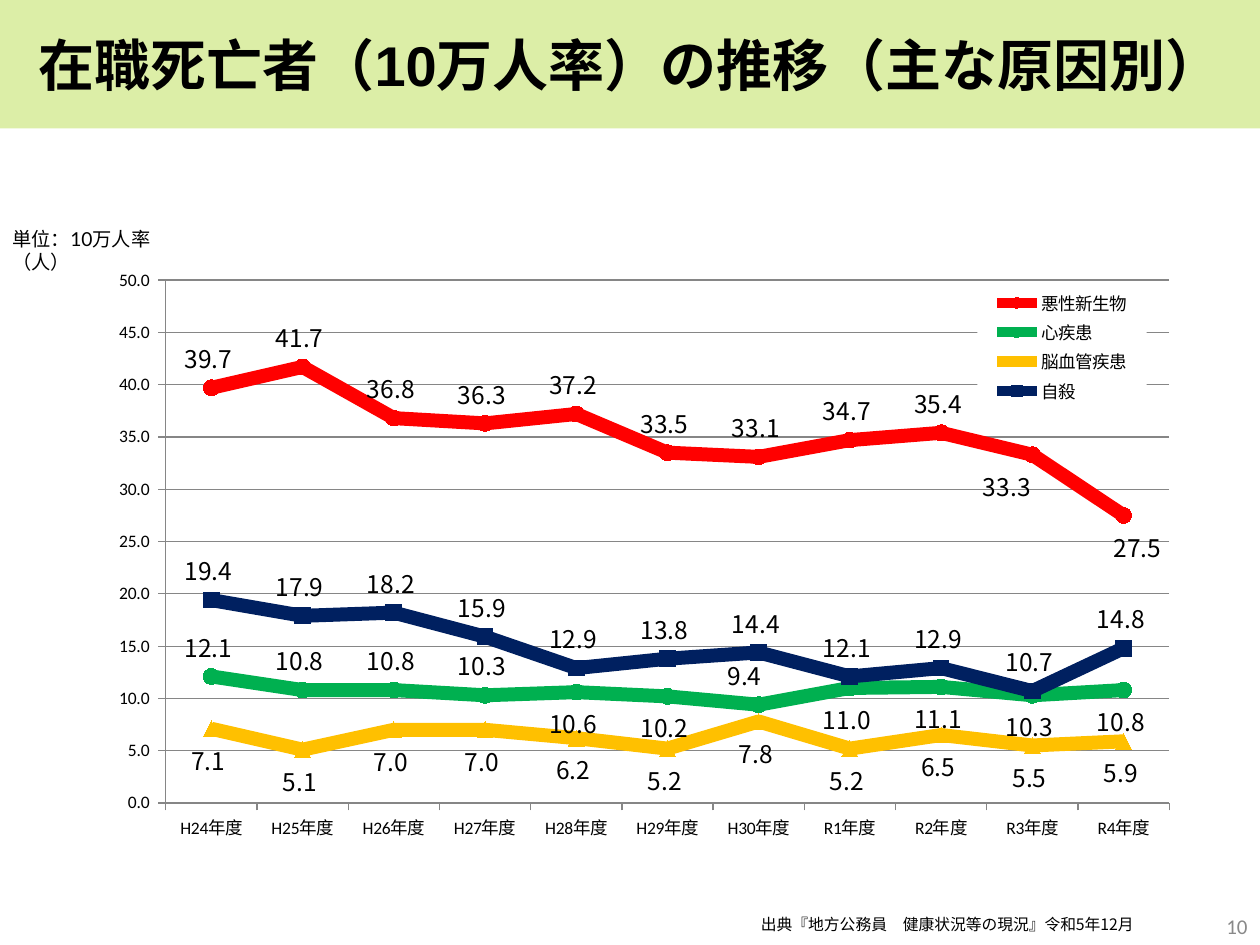
"""Build a slide with a line chart of death rates by main cause."""
from dataclasses import dataclass, field

from lxml import etree
from pptx import Presentation
from pptx import util as u
from pptx.chart.data import CategoryChartData
from pptx.dml.color import RGBColor
from pptx.enum import chart as ch
from pptx.enum import text as t
from pptx.oxml.ns import qn

BLACK = RGBColor(0x00, 0x00, 0x00)
WHITE = RGBColor(0xFF, 0xFF, 0xFF)
GREY = RGBColor(0x89, 0x89, 0x89)
GRID = RGBColor(0x86, 0x86, 0x86)
BAND = RGBColor(0xDC, 0xEE, 0xA7)
RED = RGBColor(0xFF, 0x00, 0x00)
GREEN = RGBColor(0x00, 0xB0, 0x50)
AMBER = RGBColor(0xFF, 0xC0, 0x00)
NAVY = RGBColor(0x00, 0x20, 0x60)
CJK = "Noto Sans CJK JP"
RATE_FORMAT = r"0.0_);[Red]\(0.0\)"
ABOVE, BELOW = ch.XL_LABEL_POSITION.ABOVE, ch.XL_LABEL_POSITION.BELOW
MARKERS = ch.XL_MARKER_STYLE
YEARS = [f"H{n}年度" for n in range(24, 31)] + [f"R{n}年度" for n in range(1, 5)]


@dataclass
class Cause:
    name: str
    rates: list[float]
    color: RGBColor
    marker: MARKERS
    position: ch.XL_LABEL_POSITION
    moved: dict[int, float] = field(default_factory=dict)


@dataclass
class Note:
    words: str
    place: tuple[float, float, float, float]
    font: dict
    align: t.PP_ALIGN = t.PP_ALIGN.LEFT
    anchor: t.MSO_ANCHOR = t.MSO_ANCHOR.TOP


CAUSES = [
    Cause("悪性新生物", [39.7, 41.7, 36.8, 36.3, 37.2, 33.5, 33.1, 34.7, 35.4, 33.3, 27.5],
          RED, MARKERS.CIRCLE, ABOVE, {9: -0.02, 10: 0.015}),
    Cause("心疾患", [12.1, 10.8, 10.8, 10.3, 10.6, 10.2, 9.4, 11.0, 11.1, 10.3, 10.8],
          GREEN, MARKERS.CIRCLE, BELOW, {0: 0, 1: 0, 2: 0, 3: 0, 6: -0.01}),
    Cause("脳血管疾患", [7.1, 5.1, 7.0, 7.0, 6.2, 5.2, 7.8, 5.2, 6.5, 5.5, 5.9],
          AMBER, MARKERS.TRIANGLE, BELOW),
    Cause("自殺", [19.4, 17.9, 18.2, 15.9, 12.9, 13.8, 14.4, 12.1, 12.9, 10.7, 14.8],
          NAVY, MARKERS.SQUARE, ABOVE),
]
NOTES = [
    Note("単位：10万人率（人）", (0, 4.45, 3.89, 0.74), dict(size=u.Pt(11), name="Lato")),
    Note("出典『地方公務員　健康状況等の現況』令和5年12月", (15.09, 18.31, 8.38, 1.02),
         dict(size=u.Pt(9), name=CJK)),
    Note("10", (19.48, 18.16, 5.92, 1.02), dict(size=u.Pt(12), name="Calibri", color=GREY),
         t.PP_ALIGN.RIGHT, t.MSO_ANCHOR.MIDDLE),
]


def style_font(font, size, name: str, color: RGBColor = BLACK, bold: bool = False) -> None:
    """Apply the given format values to a font."""
    for key, value in dict(size=size, name=name, bold=bold).items():
        setattr(font, key, value)
    font.color.rgb = color


def set_place(shape, place: tuple[float, float, float, float]) -> None:
    """Set position and size in centimetres."""
    for key, value in zip(("left", "top", "width", "height"), place):
        setattr(shape, key, u.Cm(value))


def write(box, words: str, font: dict, align: t.PP_ALIGN, anchor: t.MSO_ANCHOR) -> None:
    """Put one formatted paragraph into a shape."""
    frame = box.text_frame
    frame.word_wrap = True
    frame.vertical_anchor = anchor
    para = frame.paragraphs[0]
    para.alignment = align
    span = para.add_run()
    span.text = words
    style_font(span.font, **font)


def add_title(page) -> None:
    """Fill the title placeholder as a coloured band."""
    title = page.shapes.title
    set_place(title, (0, 0, 25.4, 2.59))
    title.fill.solid()
    title.fill.fore_color.rgb = BAND
    write(title, "在職死亡者（10万人率）の推移（主な原因別）",
          dict(size=u.Pt(32), name="Arial", bold=True), t.PP_ALIGN.CENTER, t.MSO_ANCHOR.MIDDLE)
    title.text_frame.margin_left = title.text_frame.margin_right = 0


def make_layout(**values) -> etree.Element:
    """Return a manual chart layout element."""
    layout = etree.Element(qn("c:layout"))
    manual = etree.SubElement(layout, qn("c:manualLayout"))
    for key, value in values.items():
        etree.SubElement(manual, qn(f"c:{key}")).set("val", str(value))
    return layout


def style_series(series, cause: Cause) -> None:
    """Format one line with its markers and labels."""
    series.smooth = False
    series.format.line.width = u.Pt(8)
    series.format.line.color.rgb = cause.color
    series.marker.style = cause.marker
    series.marker.size = 9
    series.marker.format.fill.solid()
    series.marker.format.fill.fore_color.rgb = cause.color
    series.marker.format.line.color.rgb = cause.color
    labels = series.data_labels
    for key, value in dict(show_value=True, position=cause.position, number_format=RATE_FORMAT,
                           number_format_is_linked=False).items():
        setattr(labels, key, value)
    style_font(labels.font, u.Pt(14), CJK)
    opposite = BELOW if cause.position == ABOVE else ABOVE
    for index, shift in cause.moved.items():
        label = series.points[index].data_label
        style_font(label.font, u.Pt(14), CJK)
        label.position = opposite
        if shift:
            element = labels._element.find(f"{qn('c:dLbl')}[{qn('c:idx')}][last()]")
            element.insert(1, make_layout(x=shift, y=0))


def style_axes(chart) -> None:
    """Format both axes and the gridlines."""
    for axis in (chart.category_axis, chart.value_axis):
        axis.major_tick_mark = ch.XL_TICK_MARK.OUTSIDE
        axis.format.line.color.rgb = GRID
        style_font(axis.tick_labels.font, u.Pt(10), "Calibri")
    rates = chart.value_axis
    for key, value in dict(minimum_scale=0, maximum_scale=50, major_unit=5,
                           has_major_gridlines=True).items():
        setattr(rates, key, value)
    rates.major_gridlines.format.line.color.rgb = GRID
    rates.tick_labels.number_format = RATE_FORMAT
    rates.tick_labels.number_format_is_linked = False


def style_legend(chart) -> None:
    """Place a white legend inside the plot."""
    chart.has_legend = True
    legend = chart.legend
    legend.position = ch.XL_LEGEND_POSITION.RIGHT
    legend.include_in_layout = False
    style_font(legend.font, u.Pt(10), "Calibri")
    element = legend._element
    for old in element.findall(qn("c:layout")):
        element.remove(old)
    element.find(qn("c:legendPos")).addnext(
        make_layout(xMode="edge", yMode="edge", x=0.79, y=0.05, w=0.15, h=0.21))
    fill = etree.Element(qn("c:spPr"))
    solid = etree.SubElement(fill, qn("a:solidFill"))
    etree.SubElement(solid, qn("a:srgbClr")).set("val", str(WHITE))
    element.find(qn("c:overlay")).addnext(fill)


def add_rates_chart(page) -> None:
    """Add the line chart of rates by cause."""
    data = CategoryChartData(number_format=RATE_FORMAT)
    data.categories = YEARS
    for cause in CAUSES:
        data.add_series(cause.name, cause.rates)
    place = (u.Cm(value) for value in (1.75, 5.18, 22.73, 11.76))
    chart = page.shapes.add_chart(ch.XL_CHART_TYPE.LINE_MARKERS, *place, data).chart
    chart.has_title = False
    style_font(chart.font, u.Pt(10), "Calibri")
    style_axes(chart)
    style_legend(chart)
    for series, cause in zip(chart.plots[0].series, CAUSES):
        style_series(series, cause)
    area = chart._chartSpace.chart.plotArea
    for old in area.findall(qn("c:layout")):
        area.remove(old)
    area.insert(0, make_layout(layoutTarget="inner", xMode="edge", yMode="edge",
                               x=0.07, y=0.04, w=0.89, h=0.9))


def main() -> None:
    """Build and save the deck."""
    deck = Presentation()
    deck.slide_width, deck.slide_height = u.Cm(25.4), u.Cm(19.05)
    page = deck.slides.add_slide(deck.slide_layouts[5])
    add_title(page)
    for note in NOTES:
        box = page.shapes.add_textbox(*(u.Cm(value) for value in note.place))
        write(box, note.words, note.font, note.align, note.anchor)
    add_rates_chart(page)
    deck.save("out.pptx")


if __name__ == "__main__":
    main()
